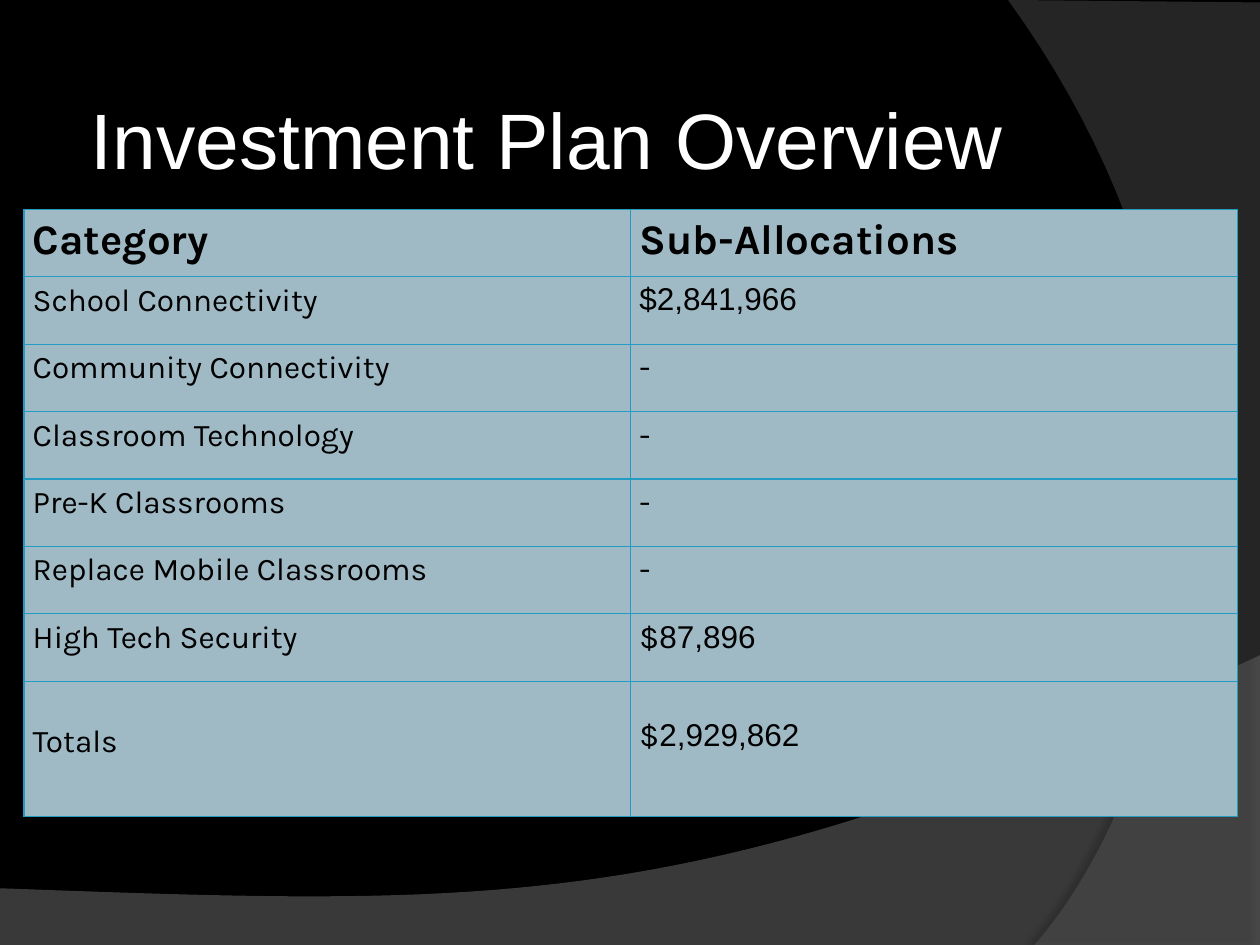
from lxml import etree
from pptx import Presentation
from pptx.dml.color import RGBColor
from pptx.enum import text
from pptx.oxml.ns import qn
from pptx.util import Inches, Pt

BLACK = RGBColor(0x00, 0x00, 0x00)
WHITE = RGBColor(0xFF, 0xFF, 0xFF)
SWOOSH_GREY = RGBColor(0x7F, 0x7F, 0x7F)
EDGE_GREY = RGBColor(0x5E, 0x5E, 0x5E)
CELL_BLUE = RGBColor(0xA0, 0xBA, 0xC5)
BORDER_BLUE = RGBColor(0x23, 0x9B, 0xC2)

HEADINGS = ("Category", "Sub-Allocations")
# Each amount is a list of (words, font) spans.
ALLOCATIONS = [
    ("School Connectivity", [("$2,841,966", "Arial")]),
    ("Community Connectivity", [("-", "Karla")]),
    ("Classroom Technology", [("-", "Karla")]),
    ("Pre-K Classrooms", [("-", "Karla")]),
    ("Replace Mobile Classrooms", [("-", "Karla")]),
    ("High Tech Security", [("$", "Karla"), ("87,896", "Arial")]),
    ("Totals", [("$", "Karla"), ("2,929,862", "Arial")]),
]


def add_child(parent, tag, **attributes):
    child = etree.SubElement(parent, qn(tag))
    for name, value in attributes.items():
        child.set(name, str(value))
    return child


def curve_points(start, control_1, control_2, end, steps=48):
    """Return points along a cubic Bezier curve, without its start."""
    points = []
    for step in range(1, steps + 1):
        t = step / steps
        weights = ((1 - t) ** 3, 3 * t * (1 - t) ** 2, 3 * t * t * (1 - t), t ** 3)
        corners = (start, control_1, control_2, end)
        points.append(tuple(sum(w * c[axis] for w, c in zip(weights, corners))
                            for axis in (0, 1)))
    return points


def add_swoosh(page, box, outline, color, opacity, shadow):
    """Draw a translucent outline, given relative to the box's top left corner."""
    left, top = box
    points = [(Inches(left + x), Inches(top + y)) for x, y in outline]
    builder = page.shapes.build_freeform(*points[0], scale=1.0)
    builder.add_line_segments(points[1:], close=True)
    swoosh = builder.convert_to_shape()
    swoosh.line.fill.background()
    swoosh.fill.solid()
    swoosh.fill.fore_color.rgb = color
    fill_color = swoosh._element.spPr.find(qn("a:solidFill"))[0]
    add_child(fill_color, "a:alpha", val=opacity * 1000)

    swoosh.shadow.inherit = False
    shadow_opacity, blur, distance, angle = shadow
    effects = swoosh._element.spPr.find(qn("a:effectLst"))
    outer = add_child(effects, "a:outerShdw", blurRad=Pt(blur), dist=Pt(distance),
                      dir=angle * 60000, algn="ctr", rotWithShape=0)
    shadow_color = add_child(outer, "a:srgbClr", val=BLACK)
    add_child(shadow_color, "a:alpha", val=shadow_opacity * 1000)


def add_backdrop(page):
    page.background.fill.solid()
    page.background.fill.fore_color.rgb = BLACK
    floor = [(0, 1.85), (0, 2.31), (10, 2.31), (10, 0)]
    floor += curve_points((10, 0), (5.59, 2.09), (3.91, 1.99), (0, 1.85))
    add_swoosh(page, (0, 5.2), floor, SWOOSH_GREY, 45, (35, 4, 3.5, 270))
    side = [(2, 0.02), (2, 7.5), (0.21, 7.5)]
    side += curve_points((0.21, 7.5), (1.35, 6.19), (2.18, 3), (0, 0))
    add_swoosh(page, (8, 0), side, EDGE_GREY, 40, (45, 4, 4, 180))


def add_spans(para, spans, size, color, bold=False):
    for words, font in spans:
        span = para.add_run()
        span.text = words
        span.font.name = font
        span.font.size = Pt(size)
        span.font.bold = bold
        span.font.color.rgb = color


def add_title(page, left, top, width, height):
    box = page.shapes.add_textbox(Inches(left), Inches(top), Inches(width), Inches(height))
    frame = box.text_frame
    frame.word_wrap = True
    frame.vertical_anchor = text.MSO_ANCHOR.MIDDLE
    frame.margin_left = frame.margin_right = Inches(0.05)
    frame.margin_top = frame.margin_bottom = Inches(0.05)
    add_spans(frame.paragraphs[0], [("Investment Plan Overview", "Arial")], 44.9, WHITE)


def style_cell(cell):
    cell.margin_left = cell.margin_right = Inches(0.07)
    cell.margin_top = cell.margin_bottom = 0
    properties = cell._tc.get_or_add_tcPr()
    for side in ("a:lnL", "a:lnR", "a:lnT", "a:lnB"):
        line = add_child(properties, side, w=Pt(0.75))
        add_child(add_child(line, "a:solidFill"), "a:srgbClr", val=BORDER_BLUE)
    cell.fill.solid()
    cell.fill.fore_color.rgb = CELL_BLUE


def add_allocation_table(page, left, top, width, height):
    """Draw the table; the totals row is twice as high as the others."""
    rows = [[[(heading, "Karla")] for heading in HEADINGS]]
    rows += [[[(category, "Karla")], amount] for category, amount in ALLOCATIONS]
    table = page.shapes.add_table(len(rows), len(HEADINGS), Inches(left), Inches(top),
                                  Inches(width), Inches(height)).table
    table.horz_banding = False
    last = len(rows) - 1
    for column in table.columns:
        column.width = Inches(width / len(HEADINGS))
    for index, row in enumerate(rows):
        table.rows[index].height = Inches(height / (len(rows) + 1) * (2 if index == last else 1))
        for number, spans in enumerate(row):
            cell = table.cell(index, number)
            style_cell(cell)
            para = cell.text_frame.paragraphs[0]
            para.line_spacing = 1.15
            add_spans(para, spans, 24 if index == 0 else 18, BLACK, bold=index == 0)
    for cell in table.rows[last].cells:
        cell.margin_top = Inches(0.29)
    table.cell(last, 1).text_frame.paragraphs[0].line_spacing = 1.0


def main():
    deck = Presentation()
    deck.slide_width, deck.slide_height = Inches(10), Inches(7.5)
    page = deck.slides.add_slide(deck.slide_layouts[6])
    add_backdrop(page)
    add_title(page, 0.67, 0.47, 8.17, 1.25)
    add_allocation_table(page, 0.19, 1.66, 9.63, 4.82)
    deck.save("out.pptx")


if __name__ == "__main__":
    main()
